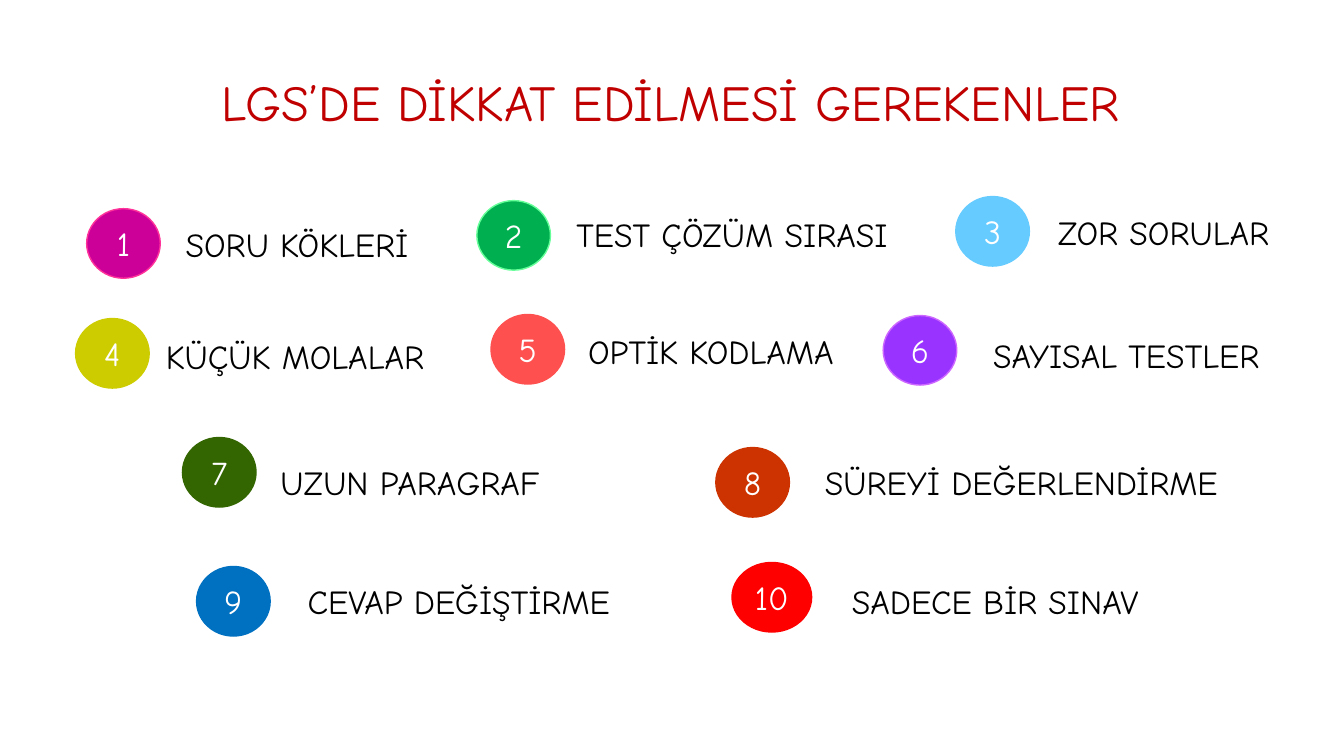
from pptx import Presentation
from pptx.dml.color import RGBColor
from pptx.enum.shapes import MSO_SHAPE
from pptx.enum.text import MSO_ANCHOR, MSO_AUTO_SIZE, PP_ALIGN
from pptx.util import Pt

PX = 9144
FONT = "Comic Neue"
COLORS = {
    "black": "000000", "white": "FFFFFF", "title": "C00000",
    "plum": "CC0099", "pink": "FF3399", "green": "00B050", "mint": "66FF99",
    "sky": "66CCFF", "olive": "CCCC00", "coral": "FF5050",
    "violet": "9933FF", "lilac": "CC66FF", "forest": "336600",
    "rust": "CC3300", "blue": "0070C0", "red": "FF0000",
}
TITLE = ("LGS’DE DİKKAT EDİLMESİ GEREKENLER", (154, 66, 1023, 71))
DOT_W, WIDE_W, DOT_H, LABEL_H = 73, 79, 69, 50

# label, (left, top, width), dot (left, top), fill, line
TIPS = [
    ("SORU KÖKLERİ", (77, 217, 435), (86, 207), "plum", "pink"),
    ("TEST ÇÖZÜM SIRASI", (526, 207, 400), (473, 199), "green", "mint"),
    ("ZOR SORULAR", (975, 205, 358), (948, 195), "sky", "sky"),
    ("KÜÇÜK MOLALAR", (110, 328, 365), (75, 316), "olive", "olive"),
    ("OPTİK KODLAMA", (548, 323, 314), (487, 312), "coral", "coral"),
    ("SAYISAL TESTLER", (945, 327, 344), (876, 313), "violet", "lilac"),
    ("UZUN PARAGRAF", (217, 453, 379), (181, 434), "forest", "forest"),
    ("SÜREYİ DEĞERLENDİRME", (783, 453, 460), (710, 444), "rust", "rust"),
    ("CEVAP DEĞİŞTİRME", (248, 571, 414), (195, 562), "blue", "blue"),
    ("SADECE BİR SINAV", (783, 571, 408), (726, 558), "red", "red"),
]


def color(name):
    return RGBColor.from_string(COLORS[name])


def emu(box):
    return [n * PX for n in box]


def write(shape, text, size=24, ink="black", anchor=MSO_ANCHOR.TOP):
    frame = shape.text_frame
    frame.word_wrap = True
    frame.vertical_anchor = anchor
    para = frame.paragraphs[0]
    para.alignment = PP_ALIGN.CENTER
    run = para.add_run()
    run.text = text
    run.font.name = FONT
    run.font.size = Pt(size)
    run.font.color.rgb = color(ink)


def label(shapes, text, box, **style):
    shape = shapes.add_textbox(*emu(box))
    write(shape, text, **style)
    shape.text_frame.auto_size = MSO_AUTO_SIZE.SHAPE_TO_FIT_TEXT


def dot(shapes, text, spot, fill, line):
    width = WIDE_W if len(text) > 1 else DOT_W
    shape = shapes.add_shape(MSO_SHAPE.FLOWCHART_CONNECTOR, *emu((*spot, width, DOT_H)))
    shape.shadow.inherit = False
    shape.fill.solid()
    shape.fill.fore_color.rgb = color(fill)
    shape.line.color.rgb = color(line)
    shape.line.width = Pt(1)
    write(shape, text, ink="white", anchor=MSO_ANCHOR.MIDDLE)


def main():
    deck = Presentation()
    deck.slide_width, deck.slide_height = emu((1333, 750))
    shapes = deck.slides.add_slide(deck.slide_layouts[6]).shapes
    for text, box, *_ in TIPS:
        label(shapes, text, (*box, LABEL_H))
    for num, (_, _, spot, fill, line) in enumerate(TIPS, 1):
        dot(shapes, str(num), spot, fill, line)
    label(shapes, *TITLE, size=36, ink="title")
    deck.save("out.pptx")


if __name__ == "__main__":
    main()
